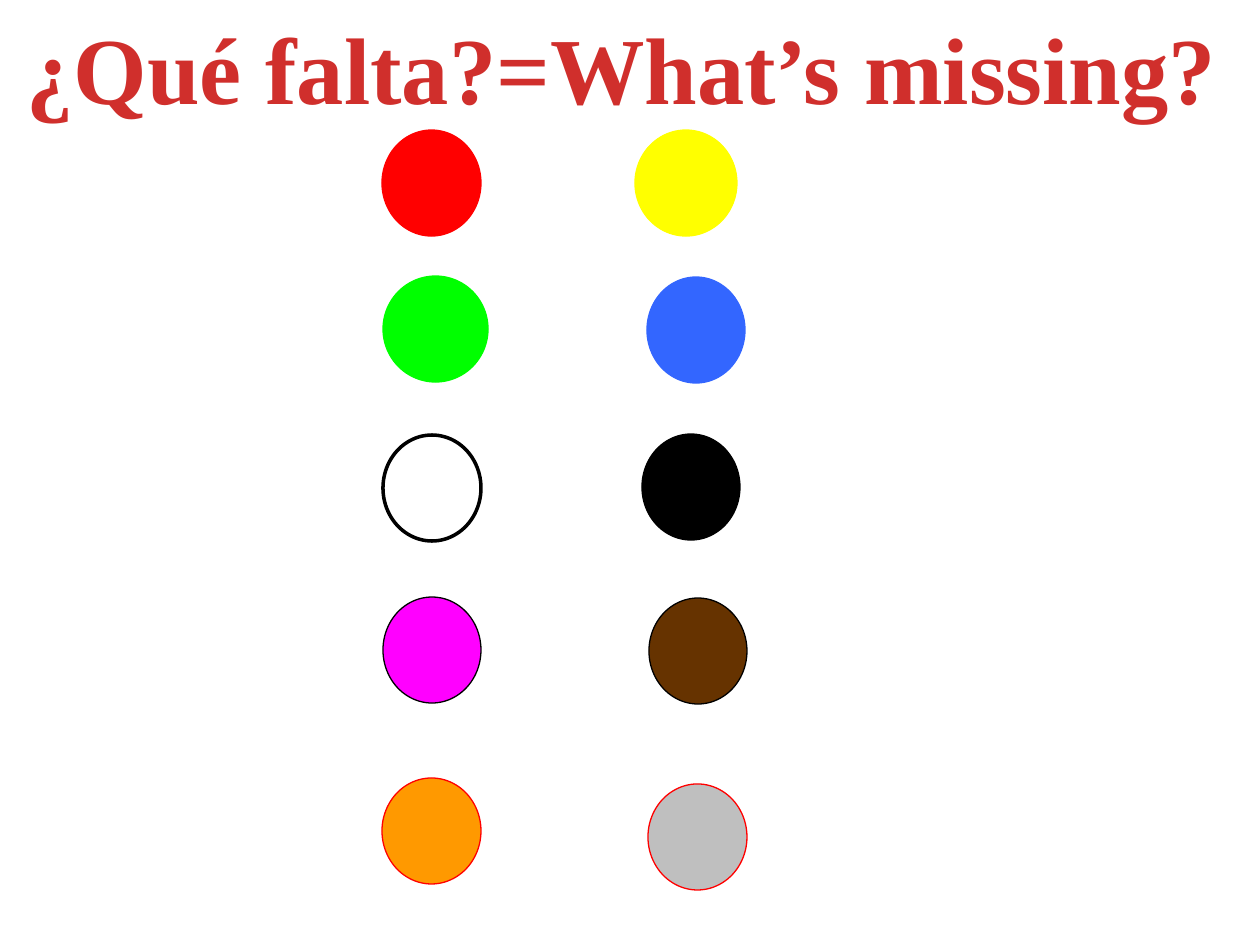
from dataclasses import dataclass

from pptx import Presentation
from pptx.dml.color import RGBColor
from pptx.enum.shapes import MSO_SHAPE as Shape
from pptx.enum.text import MSO_AUTO_SIZE as AutoSize, PP_ALIGN as Align
from pptx.util import Emu, Pt

EMU_PER_PX = 914400 / 126


def px(length):
    return Emu(round(length * EMU_PER_PX))


@dataclass(frozen=True)
class Theme:
    font: str = "Times New Roman"
    title_size: int = 54
    title: str = "D02F2C"
    red: str = "FF0000"
    yellow: str = "FFFF00"
    green: str = "00FF00"
    blue: str = "3366FF"
    white: str = "FFFFFF"
    black: str = "000000"
    magenta: str = "FF00FF"
    brown: str = "663300"
    orange: str = "FF9900"
    grey: str = "BFBFBF"
    thin: float = 0.75
    thick: float = 2


class SlideBuilder:
    def __init__(self, page, theme):
        self.page = page
        self.theme = theme

    def title(self, text, left, top, width, height):
        box = self.page.shapes.add_textbox(*map(px, (left, top, width, height)))
        frame = box.text_frame
        frame.word_wrap = False
        frame.auto_size = AutoSize.SHAPE_TO_FIT_TEXT
        para = frame.paragraphs[0]
        para.alignment = Align.CENTER
        span = para.add_run()
        span.text = text
        style = {"name": self.theme.font, "size": Pt(self.theme.title_size), "bold": True}
        for name, value in style.items():
            setattr(span.font, name, value)
        span.font.color.rgb = RGBColor.from_string(self.theme.title)

    def spot(self, left, top, width, height, fill, outline, weight):
        spot = self.page.shapes.add_shape(
            Shape.OVAL, *map(px, (left, top, width, height)))
        spot.shadow.inherit = False
        spot.fill.solid()
        spot.fill.fore_color.rgb = RGBColor.from_string(fill)
        spot.line.color.rgb = RGBColor.from_string(outline)
        spot.line.width = Pt(weight)


def main():
    deck = Presentation()
    deck.slide_width, deck.slide_height = px(1260), px(945)
    theme = Theme()
    builder = SlideBuilder(deck.slides.add_slide(deck.slide_layouts[6]), theme)

    # Colour spots, row by row: left, top, width, fill, outline, weight
    spot_height = 106
    spots = [
        (382, 130, 99, theme.red, theme.red, theme.thin),
        (635, 130, 102, theme.yellow, theme.yellow, theme.thin),
        (383, 276, 105, theme.green, theme.green, theme.thin),
        (647, 277, 98, theme.blue, theme.blue, theme.thin),
        (383, 435, 98, theme.white, theme.black, theme.thick),
        (642, 434, 98, theme.black, theme.black, theme.thin),
        (383, 597, 98, theme.magenta, theme.black, theme.thin),
        (649, 598, 98, theme.brown, theme.black, theme.thin),
        (382, 778, 99, theme.orange, theme.red, theme.thin),
        (648, 784, 99, theme.grey, theme.red, theme.thin),
    ]
    for left, top, width, fill, outline, weight in spots:
        builder.spot(left, top, width, spot_height, fill, outline, weight)

    # Heading
    builder.title("¿Qué falta?=What’s missing?", 8, 4, 1227, 127)

    deck.save("out.pptx")


if __name__ == "__main__":
    main()
